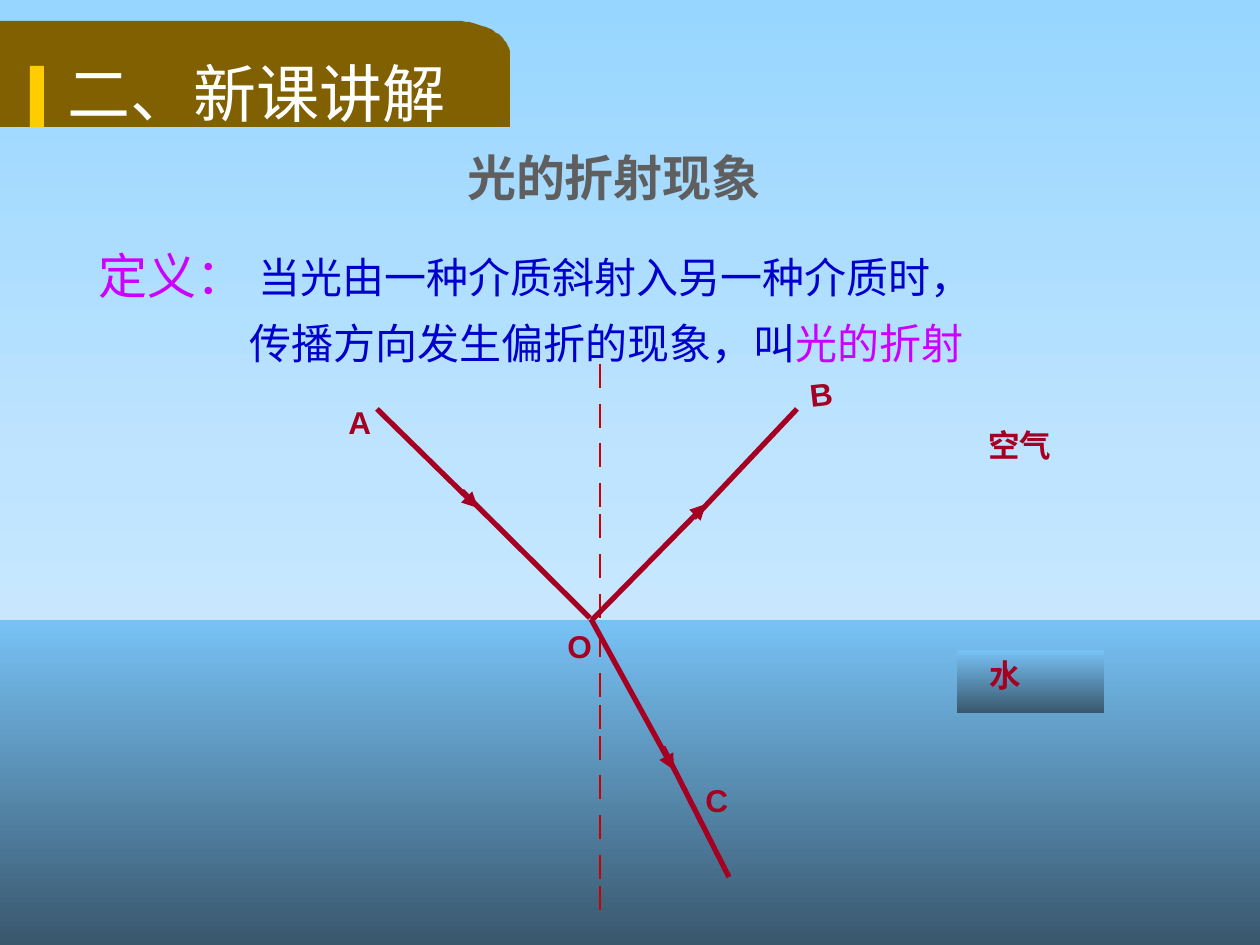
from math import cos, pi, sin

from lxml.etree import SubElement
from pptx import Presentation
from pptx.dml.color import RGBColor
from pptx.enum.shapes import MSO_CONNECTOR, MSO_SHAPE
from pptx.enum.text import MSO_ANCHOR, PP_ALIGN
from pptx.oxml.ns import qn
from pptx.util import Emu, Inches, Pt

PX = 914400 / 126
LATIN_FONT = "Arial"
CHINESE_FONT = "Noto Sans CJK SC"

SKY = (RGBColor(0x97, 0xD6, 0xFF), RGBColor(0xBF, 0xE4, 0xFF), RGBColor(0xDF, 0xF1, 0xFF))
WATER = (RGBColor(0x77, 0xC2, 0xF5), RGBColor(0x39, 0x57, 0x6D))
BROWN = RGBColor(0x80, 0x60, 0x00)
GOLD = RGBColor(0xFF, 0xCC, 0x00)
WHITE = RGBColor(0xFF, 0xFF, 0xFF)
CRIMSON = RGBColor(0xA5, 0x00, 0x21)
RED = RGBColor(0xCC, 0x00, 0x00)
BLUE = RGBColor(0x00, 0x00, 0xCC)
MAGENTA = RGBColor(0xCC, 0x00, 0xFF)
GRAY = RGBColor(0x5F, 0x5F, 0x5F)


def px(*lengths):
    return [Emu(round(length * PX)) for length in lengths]


class SlideBuilder:
    def __init__(self, slide):
        self.slide = slide

    def gradient(self, fill, element, colors):
        """Fill from top to bottom with evenly spaced colours."""
        fill.gradient()
        fill.gradient_angle = 270
        stops = element.find(".//" + qn("a:gsLst"))
        for stop in list(stops):
            stops.remove(stop)
        for index, color in enumerate(colors):
            position = 100000 * index // (len(colors) - 1)
            stop = SubElement(stops, qn("a:gs"), pos=str(position))
            SubElement(stop, qn("a:srgbClr"), val=str(color))

    def background(self, colors):
        self.gradient(self.slide.background.fill, self.slide.element, colors)

    def plain(self, shape, colors):
        """Drop outline and shadow; several colours make a gradient."""
        shape.shadow.inherit = False
        shape.line.fill.background()
        if len(colors) > 1:
            self.gradient(shape.fill, shape.element, colors)
        else:
            shape.fill.solid()
            shape.fill.fore_color.rgb = colors[0]
        return shape

    def rectangle(self, box, *colors):
        shape = self.slide.shapes.add_shape(MSO_SHAPE.RECTANGLE, *px(*box))
        return self.plain(shape, colors)

    def tab(self, left, top, right, bottom, radius_x, radius_y, color):
        """Banner whose upper right corner is an elliptical arc."""
        steps = 24
        angles = [pi / 2 * step / steps for step in range(steps + 1)]
        arc = [(right - radius_x + radius_x * sin(angle),
                top + radius_y - radius_y * cos(angle)) for angle in angles]
        builder = self.slide.shapes.build_freeform(left, top, scale=PX)
        builder.add_line_segments(arc + [(right, bottom), (left, bottom)], close=True)
        self.plain(builder.convert_to_shape(), [color])

    def line(self, start, end, color, width, arrow=False):
        connector = self.slide.shapes.add_connector(
            MSO_CONNECTOR.STRAIGHT, *px(*start, *end))
        connector.line.color.rgb = color
        connector.line.width = Pt(width)
        properties = connector.element.spPr
        if arrow:
            SubElement(properties.find(qn("a:ln")), qn("a:tailEnd"), type="triangle")
        SubElement(properties, qn("a:effectLst"))

    def label(self, shape, runs, size, bold=False, spacing=None,
              align=PP_ALIGN.LEFT, anchor=MSO_ANCHOR.TOP, wrap=True):
        frame = shape.text_frame
        frame.word_wrap = wrap
        frame.vertical_anchor = anchor
        paragraph = frame.paragraphs[0]
        paragraph.alignment = align
        paragraph.line_spacing = spacing
        for text, color in runs:
            run = paragraph.add_run()
            run.text = text
            font = run.font
            font.size, font.bold, font.name = Pt(size), bold, LATIN_FONT
            font.color.rgb = color
        for run_properties in shape.element.iter(qn("a:rPr")):
            SubElement(run_properties, qn("a:ea"), typeface=CHINESE_FONT)

    def text(self, box, runs, size, rotation=0, **style):
        shape = self.slide.shapes.add_textbox(*px(*box))
        shape.rotation = rotation
        self.label(shape, runs, size, **style)


def main():
    presentation = Presentation()
    presentation.slide_width, presentation.slide_height = Inches(10), Inches(7.5)
    builder = SlideBuilder(presentation.slides.add_slide(presentation.slide_layouts[6]))

    builder.background(SKY)
    builder.tab(-4, 21, 510, 127, 55, 34, BROWN)
    builder.rectangle((30, 66, 14, 61), GOLD)
    builder.text((55, 52, 470, 91), [("二、新课讲解", WHITE)], 36,
                 spacing=0.9, anchor=MSO_ANCHOR.MIDDLE)

    builder.rectangle((0, 620, 1260, 325), *WATER)
    water_label = builder.rectangle((957, 650, 147, 63), *WATER)
    water_label.text_frame.margin_left = px(33)[0]
    builder.label(water_label, [("水", CRIMSON)], 18, bold=True)

    normal_x, dash_length = 600, 24
    for top in (364, 404, 443, 483, 514, 554, 594, 633,
                673, 705, 736, 775, 815, 855, 886):
        builder.line((normal_x, top), (normal_x, top + dash_length), RED, 0.75)

    # Each ray is an arrowed first part and a plain second part.
    rays = (
        ((377, 409), (478, 508), (462, 491), (590, 618)),
        ((592, 620), (706, 504), (694, 518), (797, 409)),
        ((591, 619), (674, 770), (663, 747), (729, 877)),
    )
    for start, arrow_tip, join, end in rays:
        builder.line(start, arrow_tip, CRIMSON, 3, arrow=True)
        builder.line(join, end, CRIMSON, 3)

    point_labels = (
        ("A", (336, 397, 50, 63), 0),
        ("O", (555, 621, 50, 63), 0),
        ("B", (798, 369, 33, 63), 353.8),
        ("C", (693, 775, 103, 63), 0),
    )
    for name, box, rotation in point_labels:
        builder.text(box, [(name, CRIMSON)], 18, rotation, bold=True)
    builder.text((976, 420, 110, 63), [("空气", CRIMSON)], 18, bold=True, wrap=False)

    builder.text((86, 213, 140, 98), [("定义：", MAGENTA)], 28, spacing=1.45, wrap=False)
    builder.text((237, 289, 753, 87),
                 [("传播方向发生偏折的现象，叫", BLUE), ("光的折射", MAGENTA)], 24, spacing=1.45)
    builder.text((246, 223, 743, 87),
                 [("当光由一种介质斜射入另一种介质时，", BLUE)], 24, spacing=1.45)
    builder.text((336, 141, 556, 72), [("光的折射现象", GRAY)], 28,
                 bold=True, align=PP_ALIGN.CENTER)

    presentation.save("out.pptx")


if __name__ == "__main__":
    main()
